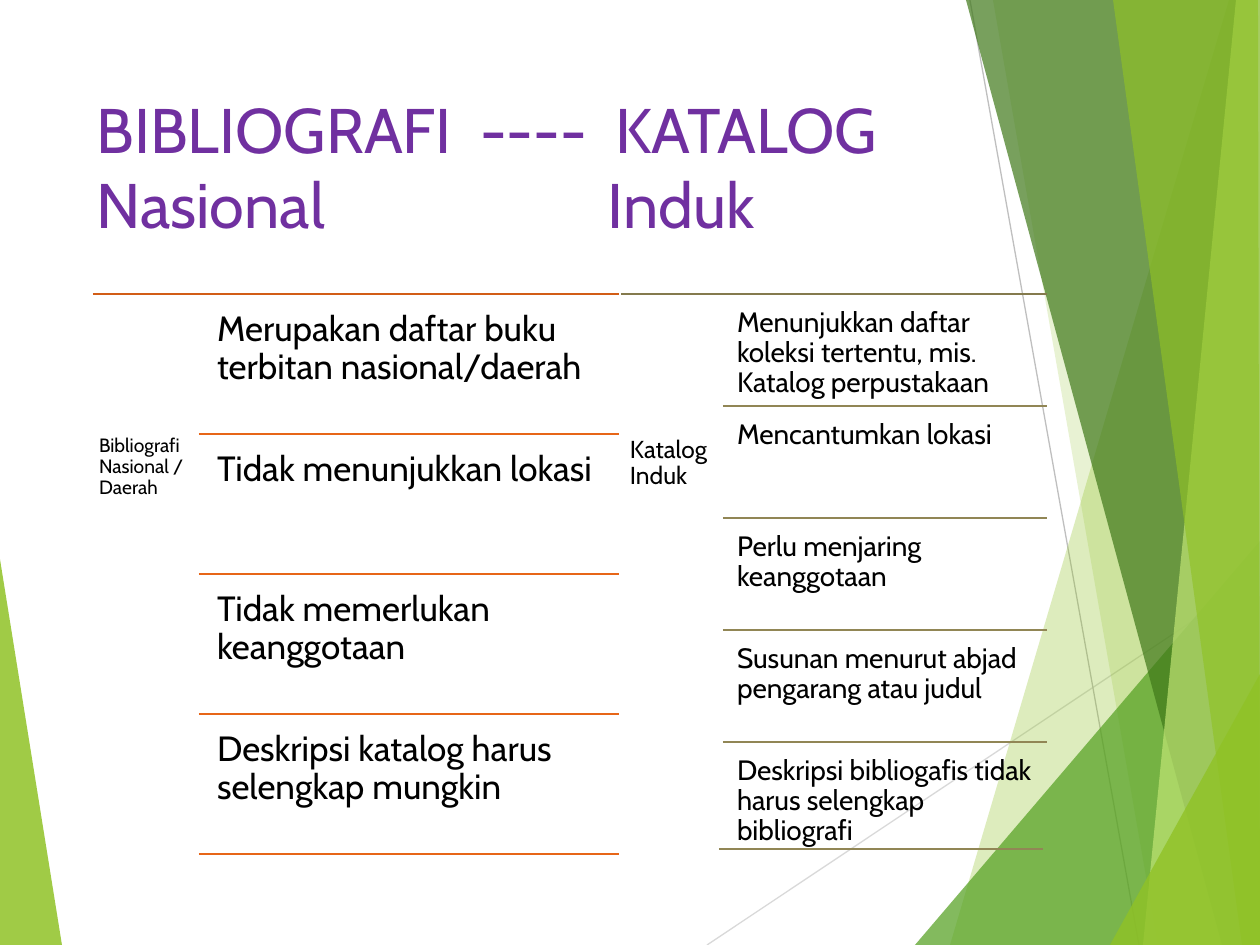
import pptx
import pptx.dml.color
import pptx.enum.shapes
import pptx.enum.text
import pptx.oxml
import pptx.oxml.ns
import pptx.util
import lxml.etree

PX = 914400 / 126
FONT = "Cabin"
COLORS = {
    "lime": "90C226", "green": "54A021", "forest": "3F7819", "pale": "C0E474",
    "gray": "BFBFBF", "light_gray": "D9D9D9", "purple": "7030A0", "black": "000000",
    "orange_top": "D25D16", "orange": "E76618", "olive_top": "847A4D", "olive": "918655",
}
qn = pptx.oxml.ns.qn
rgb = pptx.dml.color.RGBColor.from_string


def add_line(x1, y1, x2, y2, color, width=1.5):
    ends = [round(v * PX) for v in (x1, y1, x2, y2)]
    c = s.shapes.add_connector(pptx.enum.shapes.MSO_CONNECTOR.STRAIGHT, *ends)
    c.line.color.rgb = rgb(COLORS[color])
    c.line.width = pptx.util.Pt(width)
    lxml.etree.SubElement(c._element.spPr, qn("a:effectLst"))


def add_text(x, y, w, h, text, size, inset, top):
    """Add a wrapped text box; inset applies to all sides but the top."""
    tf = s.shapes.add_textbox(*[round(v * PX) for v in (x, y, w, h)]).text_frame
    tf.word_wrap = True
    tf.margin_left = tf.margin_right = tf.margin_bottom = round(inset * PX)
    tf.margin_top = round(top * PX)
    p = tf.paragraphs[0]
    p.line_spacing = 0.9
    r = p.add_run()
    r.text = text
    r.font.name = FONT
    r.font.size = pptx.util.Pt(size)
    r.font.color.rgb = rgb(COLORS["black"])


prs = pptx.Presentation()
prs.slide_width = pptx.util.Inches(10)
prs.slide_height = pptx.util.Inches(7.5)
s = prs.slides.add_slide(prs.slide_layouts[5])

# Background facets: colour, opacity in percent, corners
add_line(707, 945, 1260, 576, "light_gray", 0.75)
add_line(970, 0, 1139, 945, "gray", 0.75)
facets = [
    ("lime", 85, [(0, 559), (62, 945), (0, 945)]),
    ("lime", 30, [(1229, 0), (950, 945), (1260, 945), (1260, 0)]),
    ("lime", 20, [(993, 0), (1158, 945), (1260, 945), (1260, 0)]),
    ("green", 72, [(915, 945), (1260, 541), (1260, 945)]),
    ("forest", 70, [(966, 0), (1222, 945), (1260, 945), (1260, 0)]),
    ("pale", 70, [(1236, 0), (1143, 945), (1260, 945), (1260, 0)]),
    ("lime", 65, [(1113, 0), (1242, 945), (1260, 945), (1258, 0)]),
    ("lime", 80, [(1110, 945), (1260, 674), (1260, 945)]),
]
for color, opacity, corners in facets:
    fb = s.shapes.build_freeform(*corners[0], scale=PX)
    fb.add_line_segments(corners[1:], close=True)
    sp = fb.convert_to_shape()
    sp.shadow.inherit = False
    sp.line.fill.background()
    sp.fill.solid()
    sp.fill.fore_color.rgb = rgb(COLORS[color])
    clr = sp._element.spPr.find(qn("a:solidFill"))[0]
    lxml.etree.SubElement(clr, qn("a:alpha"), val=str(opacity * 1000))

# Title: a tab stop lines up the second column
title = s.shapes.title
title.left, title.top, title.width, title.height = [
    round(v * PX) for v in (84, 84, 953, 181)]
tf = title.text_frame
tf.auto_size = pptx.enum.text.MSO_AUTO_SIZE.NONE
tf.vertical_anchor = pptx.enum.text.MSO_ANCHOR.TOP
p = tf.paragraphs[0]
p.alignment = pptx.enum.text.PP_ALIGN.LEFT
tabs = lxml.etree.SubElement(p._p.get_or_add_pPr(), qn("a:tabLst"))
lxml.etree.SubElement(tabs, qn("a:tab"), pos=str(round(511 * PX)), algn="l")
for i, text in enumerate(["BIBLIOGRAFI  ----  KATALOG", "Nasional\tInduk"]):
    if i:
        p.add_line_break()
    r = p.add_run()
    r.text = text
    r.font.name = FONT
    r.font.size = pptx.util.Pt(36)
    r.font.color.rgb = rgb(COLORS["purple"])

# Two ruled columns: a label on the left, its points on the right
TOP = 294
columns = [
    dict(left=93, right=619, label="Bibliografi Nasional / Daerah", label_w=105,
         label_size=11, label_inset=6, label_top=228, rule_left=199, text_left=207,
         size=20, inset=10, pitch=140, gap=7, color="orange", last_shift=(0, 0),
         points=["Merupakan daftar buku terbitan nasional/daerah",
                 "Tidak menunjukkan lokasi",
                 "Tidak memerlukan keanggotaan",
                 "Deskripsi katalog harus selengkap mungkin"]),
    dict(left=621, right=1047, label="Katalog Induk", label_w=102,
         label_size=14, label_inset=9, label_top=242, rule_left=723, text_left=728,
         size=16, inset=9, pitch=112, gap=5, color="olive", last_shift=(-4, -5),
         points=["Menunjukkan daftar koleksi tertentu, mis. Katalog perpustakaan",
                 "Mencantumkan lokasi",
                 "Perlu menjaring keanggotaan",
                 "Susunan menurut abjad pengarang atau judul",
                 "Deskripsi bibliogafis tidak harus selengkap bibliografi"]),
]
for col in columns:
    add_line(col["left"], TOP, col["right"], TOP, col["color"] + "_top")
    add_text(col["left"], TOP, col["label_w"], 566, col["label"],
             col["label_size"], col["label_inset"], col["label_top"])
    for i, point in enumerate(col["points"]):
        y = TOP + i * col["pitch"]
        add_text(col["text_left"], y + col["gap"], col["right"] - col["text_left"],
                 col["pitch"] - col["gap"], point, col["size"], col["inset"], col["inset"])
        is_last = i == len(col["points"]) - 1
        dx, dy = col["last_shift"] if is_last else (0, 0)
        rule_y = y + col["pitch"] + dy
        add_line(col["rule_left"] + dx, rule_y, col["right"] + dx, rule_y, col["color"])

prs.save("out.pptx")
